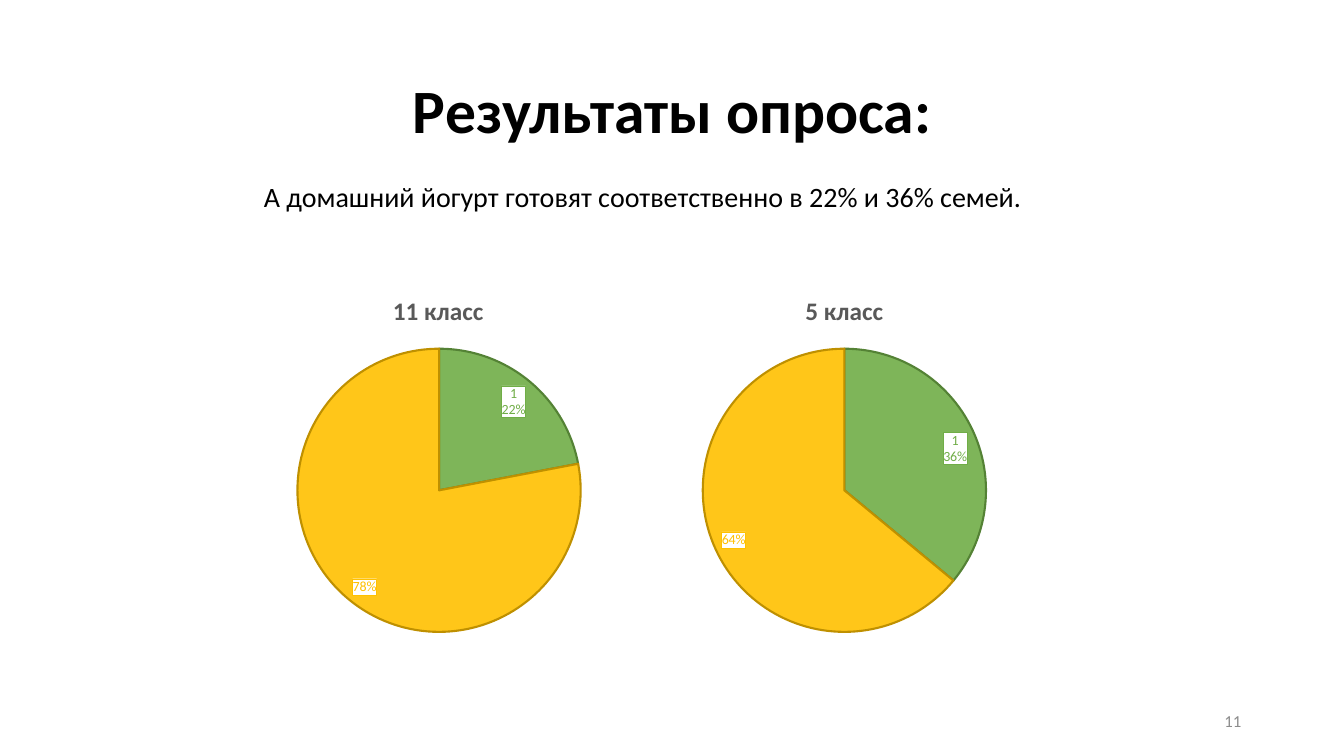
from lxml import etree
from pptx import Presentation
from pptx.chart.data import CategoryChartData
from pptx.dml.color import RGBColor
from pptx.enum.chart import XL_CHART_TYPE, XL_LABEL_POSITION
from pptx.enum.text import MSO_ANCHOR, PP_ALIGN
from pptx.oxml import parse_xml
from pptx.oxml.ns import nsdecls, qn
from pptx.util import Inches, Pt

PIE = XL_CHART_TYPE.PIE
INSIDE_END = XL_LABEL_POSITION.INSIDE_END
TOP, MIDDLE = MSO_ANCHOR.TOP, MSO_ANCHOR.MIDDLE
CENTER, RIGHT = PP_ALIGN.CENTER, PP_ALIGN.RIGHT

FONT = "Calibri"
BLACK = RGBColor(0x00, 0x00, 0x00)
GREY = RGBColor(0x8C, 0x8C, 0x8C)
TITLE_GREY = RGBColor(0x59, 0x59, 0x59)
GREEN = RGBColor(0x70, 0xAD, 0x47)
DARK_GREEN = RGBColor(0x54, 0x82, 0x35)
YELLOW = RGBColor(0xFF, 0xC0, 0x00)
DARK_YELLOW = RGBColor(0xBF, 0x90, 0x00)

CHART_TOP, CHART_HEIGHT = 2.75, 3.66
PIE_TOP, PIE_SIZE = 3.46, 2.81
# Point index, fill, outline, whether the label names the category
SLICES = [(0, GREEN, DARK_GREEN, True), (2, YELLOW, DARK_YELLOW, False)]


def style_font(font, size, color, bold=False):
    font.name = FONT
    font.size = Pt(size)
    font.bold = bold
    font.color.rgb = color


def add_text(slide, box, text, size, color, align, anchor=TOP, bold=False, spacing=1.0):
    frame = slide.shapes.add_textbox(*map(Inches, box)).text_frame
    frame.word_wrap = True
    frame.vertical_anchor = anchor
    paragraph = frame.paragraphs[0]
    paragraph.alignment = align
    paragraph.line_spacing = spacing
    run = paragraph.add_run()
    run.text = text
    style_font(run.font, size, color, bold)


def place(part, index, **settings):
    """Give a chart part a manual layout as fractions of the chart."""
    for old_layout in part.findall(qn("c:layout")):
        part.remove(old_layout)
    layout = etree.Element(qn("c:layout"))
    manual = etree.SubElement(layout, qn("c:manualLayout"))
    for tag, value in settings.items():
        etree.SubElement(manual, qn("c:" + tag)).set("val", str(value))
    part.insert(index, layout)


def style_slice(point, fill, outline):
    point.format.fill.solid()
    point.format.fill.fore_color.rgb = fill
    point.format.line.color.rgb = outline
    point.format.line.width = Pt(1.5)


def style_label(label, color):
    style_font(label.font, 10, color)
    label.position = INSIDE_END


def add_white_ground(label_xml, color):
    for old_ground in label_xml.findall(qn("c:spPr")):
        label_xml.remove(old_ground)
    label_xml.find(qn("c:txPr")).addprevious(parse_xml(
        f'<c:spPr {nsdecls("c", "a")}>'
        '<a:solidFill><a:srgbClr val="FFFFFF"/></a:solidFill>'
        f'<a:ln w="3175"><a:solidFill><a:srgbClr val="{color}"/></a:solidFill></a:ln>'
        '</c:spPr>'))


def show_percent(label_xml, with_category):
    """Show the share, below the category if wanted."""
    label_xml.find(qn("c:showVal")).set("val", "0")
    label_xml.find(qn("c:showPercent")).set("val", "1")
    label_xml.find(qn("c:showCatName")).set("val", str(int(with_category)))
    etree.SubElement(label_xml, qn("c:separator")).text = "\n"


def add_pie(slide, left, width, pie_left, heading, values):
    data = CategoryChartData()
    data.categories = ["1", "2", "3"]
    data.add_series("Series 1", values)
    box = map(Inches, (left, CHART_TOP, width, CHART_HEIGHT))
    chart = slide.shapes.add_chart(PIE, *box, data).chart
    style_font(chart.font, 10, BLACK)
    chart.has_legend = False
    plot = chart.plots[0]
    plot.vary_by_categories = True
    series = plot.series[0]

    # Heading
    chart.has_title = True
    run = chart.chart_title.text_frame.paragraphs[0].add_run()
    run.text = heading
    style_font(run.font, 18, TITLE_GREY, bold=True)

    # Slices and their labels
    style_label(series.data_labels, GREEN)
    series.data_labels.show_value = False
    series.data_labels.show_percentage = True
    for index, fill, outline, _ in SLICES:
        style_slice(series.points[index], fill, outline)
        style_label(series.points[index].data_label, fill)
    for color in chart.element.xpath(".//c:dPt/c:spPr/a:solidFill/a:srgbClr"):
        etree.SubElement(color, qn("a:alpha")).set("val", "90000")
    add_white_ground(chart.element.xpath(".//c:ser/c:dLbls")[0], GREEN)
    for label_xml, (_, fill, _, with_category) in zip(
            chart.element.xpath(".//c:dLbl"), SLICES):
        add_white_ground(label_xml, fill)
        show_percent(label_xml, with_category)

    # Positions inside the chart
    place(chart.element.xpath(".//c:title")[0], 1,
          xMode="edge", yMode="edge", x=0.4, y=0.03)
    place(chart.element.xpath(".//c:plotArea")[0], 0,
          layoutTarget="inner", xMode="edge", yMode="edge",
          x=(pie_left - left) / width, y=(PIE_TOP - CHART_TOP) / CHART_HEIGHT,
          w=PIE_SIZE / width, h=PIE_SIZE / CHART_HEIGHT)


def main():
    prs = Presentation()
    prs.slide_width, prs.slide_height = Inches(13.33), Inches(7.5)
    slide = prs.slides.add_slide(prs.slide_layouts[6])

    # Title and finding
    add_text(slide, (0.92, 0.4, 11.5, 1.45), "Результаты опроса:", 44, BLACK,
             CENTER, MIDDLE, bold=True, spacing=0.9)
    add_text(slide, (1.84, 1.73, 9.07, 0.44),
             "А домашний йогурт готовят соответственно в 22% и 36% семей.",
             20, BLACK, CENTER)

    # Survey results by class
    add_pie(slide, 1.84, 5.03, 2.95, "11 класс", (22, None, 78))
    add_pie(slide, 6.22, 4.31, 6.97, "5 класс", (36, None, 64))

    # Slide number
    add_text(slide, (9.41, 6.95, 3, 0.4), "11", 12, GREY, RIGHT, MIDDLE)

    prs.save("out.pptx")


if __name__ == "__main__":
    main()
